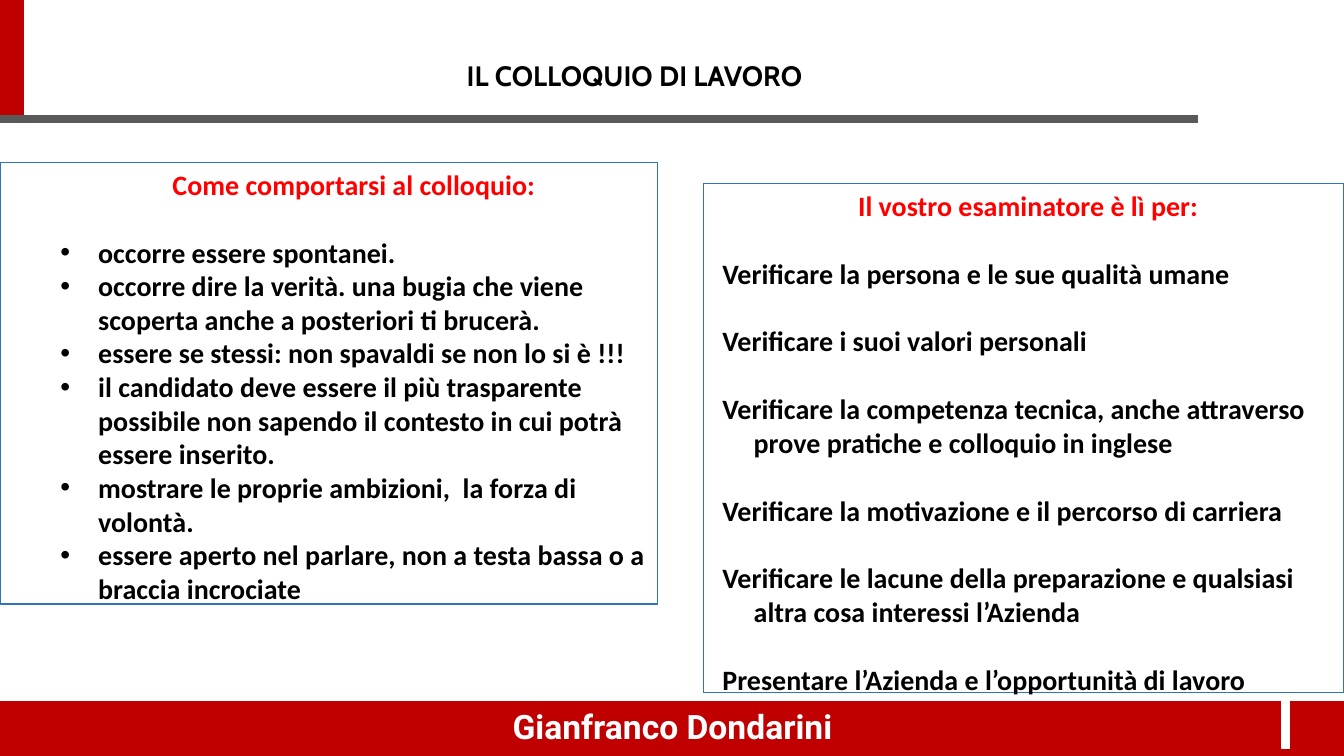
from lxml import etree
from pptx import Presentation
from pptx.dml.color import RGBColor
from pptx.enum.shapes import MSO_CONNECTOR as Connector, MSO_SHAPE as Shape
from pptx.enum.text import MSO_ANCHOR as Anchor, MSO_AUTO_SIZE as AutoSize, PP_ALIGN as Align
from pptx.oxml.ns import qn
from pptx.util import Cm, Pt

BRAND_RED = RGBColor(0xC0, 0x00, 0x00)
HEADING_RED = RGBColor(0xFF, 0x00, 0x00)
GREY = RGBColor(0x59, 0x59, 0x59)
BORDER_BLUE = RGBColor(0x2E, 0x75, 0xB6)
BLACK = RGBColor(0x00, 0x00, 0x00)
WHITE = RGBColor(0xFF, 0xFF, 0xFF)
BLANK_LINE = Pt(24.4)


def add_text(para, text, font_name, size, color):
    span = para.add_run()
    span.text = text
    span.font.name = font_name
    span.font.size = Pt(size)
    span.font.bold = True
    span.font.color.rgb = color


def set_indent(para, margin, indent, bullet=None):
    """Set the left margin, first-line indent and bullet character, if any."""
    properties = para._p.get_or_add_pPr()
    properties.set("marL", str(Cm(margin)))
    properties.set("indent", str(Cm(indent)))
    if bullet:
        etree.SubElement(properties, qn("a:buFont")).set("typeface", "Arial")
        etree.SubElement(properties, qn("a:buChar")).set("char", bullet)
    else:
        etree.SubElement(properties, qn("a:buNone"))


deck = Presentation()
deck.slide_width, deck.slide_height = Cm(33.87), Cm(19.05)
page = deck.slides.add_slide(deck.slide_layouts[3])
title, left_box, right_box = page.placeholders

# Footer band with its white mark
for left, top, width, height, color in [
    (0, 17.68, 33.87, 1.37, BRAND_RED),
    (32.31, 17.68, 0.18, 1.19, WHITE),
]:
    bar = page.shapes.add_shape(Shape.RECTANGLE, Cm(left), Cm(top), Cm(width), Cm(height))
    bar.shadow.inherit = False
    bar.fill.solid()
    bar.fill.fore_color.rgb = color
    bar.line.color.rgb = color
    bar.line.width = Pt(1)

# Header rules
for x1, y1, x2, y2, color, weight in [
    (0.3, 0, 0.3, 3, BRAND_RED, 17.25),
    (0, 3, 30.2, 3, GREY, 5.5),
]:
    rule = page.shapes.add_connector(Connector.STRAIGHT, Cm(x1), Cm(y1), Cm(x2), Cm(y2))
    rule.line.color.rgb = color
    rule.line.width = Pt(weight)
    etree.SubElement(rule.element.spPr, qn("a:effectLst"))

# Title, in front of the header and footer
tree = title.element.getparent()
tree.append(title.element)
title.left, title.top, title.width, title.height = Cm(5.97), Cm(0.69), Cm(20.04), Cm(2.54)
title.text_frame.vertical_anchor = Anchor.MIDDLE
title_para = title.text_frame.paragraphs[0]
set_indent(title_para, 0.95, -0.95)
title_para.alignment = Align.CENTER
title_para.line_spacing = 0.9
add_text(title_para, "IL COLLOQUIO DI LAVORO", "Cabin", 20, BLACK)

# Each list: box, position, heading and its indents, item indents, bullet, gap between items
lists = [
    (left_box, (0, 4.09, 16.56, 11.38), "Come comportarsi al colloquio:",
     (1.27, 0), (2.22, -0.95), "•", Pt(0), [
        "occorre essere spontanei.",
        "occorre dire la verità. una bugia che viene scoperta anche a posteriori ti brucerà.",
        "essere se stessi: non spavaldi se non lo si è !!!",
        "il candidato deve essere il più trasparente possibile non sapendo il contesto "
        "in cui potrà essere inserito.",
        "mostrare le proprie ambizioni,  la forza di volontà.",
        "essere aperto nel parlare, non a testa bassa o a braccia incrociate",
     ]),
    (right_box, (17.72, 4.62, 16.15, 13.08), "Il vostro esaminatore è lì per:",
     (1.02, -0.79), (1.02, -0.79), None, BLANK_LINE, [
        "Verificare la persona e le sue qualità umane",
        "Verificare i suoi valori personali",
        "Verificare la competenza tecnica, anche attraverso prove pratiche e colloquio in inglese",
        "Verificare la motivazione e il percorso di carriera",
        "Verificare le lacune della preparazione e qualsiasi altra cosa interessi l’Azienda",
        "Presentare l’Azienda e l’opportunità di lavoro",
     ]),
]
for box, place, heading, heading_indent, item_indent, bullet, gap, items in lists:
    tree.append(box.element)
    box.left, box.top, box.width, box.height = [Cm(length) for length in place]
    box.line.color.rgb = BORDER_BLUE
    box.line.width = Pt(0.75)
    frame = box.text_frame
    frame.word_wrap = True
    frame.auto_size = AutoSize.SHAPE_TO_FIT_TEXT
    frame.vertical_anchor = Anchor.TOP

    heading_para = frame.paragraphs[0]
    set_indent(heading_para, *heading_indent)
    heading_para.alignment = Align.CENTER
    heading_para.space_before = Pt(0)
    add_text(heading_para, heading, "Calibri", 20, HEADING_RED)

    for index, item in enumerate(items):
        para = frame.add_paragraph()
        set_indent(para, *item_indent, bullet)
        para.space_before = gap if index else BLANK_LINE
        add_text(para, item, "Calibri", 20, BLACK)

# Speaker name on the footer band
name_box = page.shapes.add_textbox(Cm(11.23), Cm(17.78), Cm(11.43), Cm(1.02))
name_box.text_frame.word_wrap = True
name_box.text_frame.vertical_anchor = Anchor.MIDDLE
name_para = name_box.text_frame.paragraphs[0]
name_para.alignment = Align.CENTER
add_text(name_para, "Gianfranco Dondarini", "Roboto", 24, WHITE)

deck.save("out.pptx")
